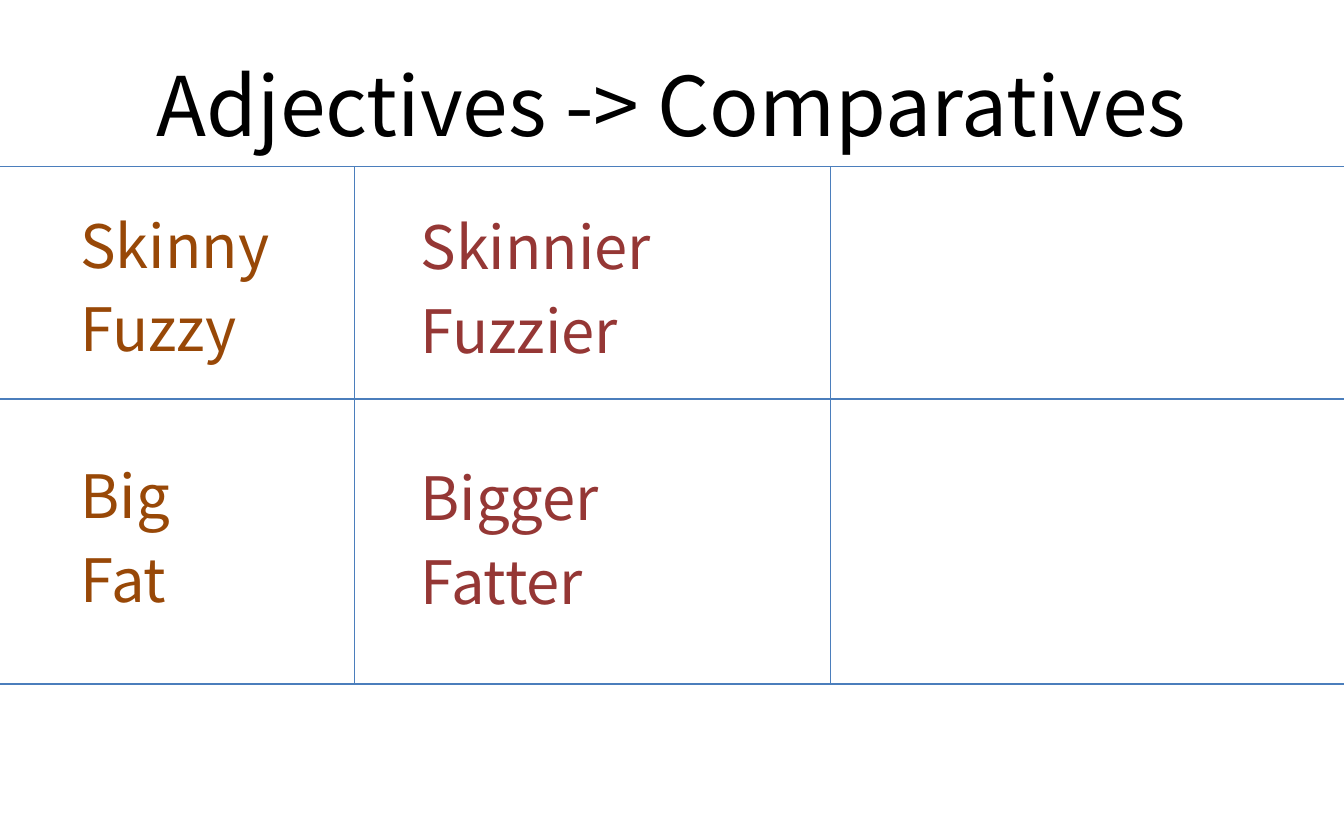
from pptx import Presentation
from pptx import util as u
from pptx.dml import color
from pptx.enum import shapes, text
from pptx.oxml import ns
from lxml import etree

WIDTH, HEIGHT = 10, 6.25
FONT = "Noto Sans CJK KR"
ROW_LINES = (1.24, 2.97, 5.09)
COLUMN_LINES = (2.64, 6.18)
LINE_PITCH, PARAGRAPH_GAP = 38.4, 6.4
GROUP_GAP = LINE_PITCH + 2 * PARAGRAPH_GAP


def paint(value):
    return color.RGBColor.from_string(value)


def apply_format(target, values):
    for name, value in values.items():
        setattr(target, name, value)


def place(box, bounds):
    names = ("left", "top", "width", "height")
    apply_format(box, dict(zip(names, map(u.Inches, bounds))))


def write(para, words, size, ink):
    span = para.add_run()
    span.text = words
    apply_format(span.font, {"name": FONT, "size": u.Pt(size)})
    span.font.color.rgb = paint(ink)


def add_title(page, bounds, words):
    box = page.shapes.title
    place(box, bounds)
    apply_format(box.text_frame, {"word_wrap": True,
                                  "auto_size": text.MSO_AUTO_SIZE.NONE,
                                  "vertical_anchor": text.MSO_ANCHOR.MIDDLE})
    para = box.text_frame.paragraphs[0]
    para.alignment = text.PP_ALIGN.CENTER
    write(para, words, 44, "000000")


def add_word_column(page, bounds, groups, ink):
    box = page.shapes.add_textbox(*map(u.Inches, bounds))
    frame = box.text_frame
    apply_format(frame, {"word_wrap": True, "margin_top": u.Inches(0.09)})
    para = frame.paragraphs[0]
    for group_index, group in enumerate(groups):
        for word_index, word in enumerate(group):
            first = group_index == word_index == 0
            if not first:
                para = frame.add_paragraph()
            gap = PARAGRAPH_GAP if word_index else GROUP_GAP
            apply_format(para, {"alignment": text.PP_ALIGN.LEFT,
                                "line_spacing": u.Pt(LINE_PITCH),
                                "space_before": u.Pt(0 if first else gap)})
            write(para, word, 32, ink)


def add_rule(page, start, end):
    rule = page.shapes.add_connector(shapes.MSO_CONNECTOR.STRAIGHT,
                                     *map(u.Inches, start + end))
    rule.line.color.rgb = paint("4B7EBC")
    rule.line.width = u.Pt(0.75)
    etree.SubElement(rule._element.spPr, ns.qn("a:effectLst"))


def add_grid(page, rows, columns):
    for row in rows:
        add_rule(page, (0, row), (WIDTH, row))
    for column in columns:
        add_rule(page, (column, rows[0]), (column, rows[-1]))


def main():
    deck = Presentation()
    apply_format(deck, {"slide_width": u.Inches(WIDTH),
                        "slide_height": u.Inches(HEIGHT)})
    page = deck.slides.add_slide(deck.slide_layouts[5])
    add_title(page, (0.5, 0.25, 9, 1.04), "Adjectives -> Comparatives")
    add_word_column(page, (0.5, 1.46, 9, 4.12),
                    (("Skinny", "Fuzzy"), ("Big", "Fat")), "984807")
    add_word_column(page, (3.03, 1.47, 6.64, 4.12),
                    (("Skinnier", "Fuzzier"), ("Bigger", "Fatter")), "953735")
    add_grid(page, ROW_LINES, COLUMN_LINES)
    deck.save("out.pptx")


if __name__ == "__main__":
    main()
